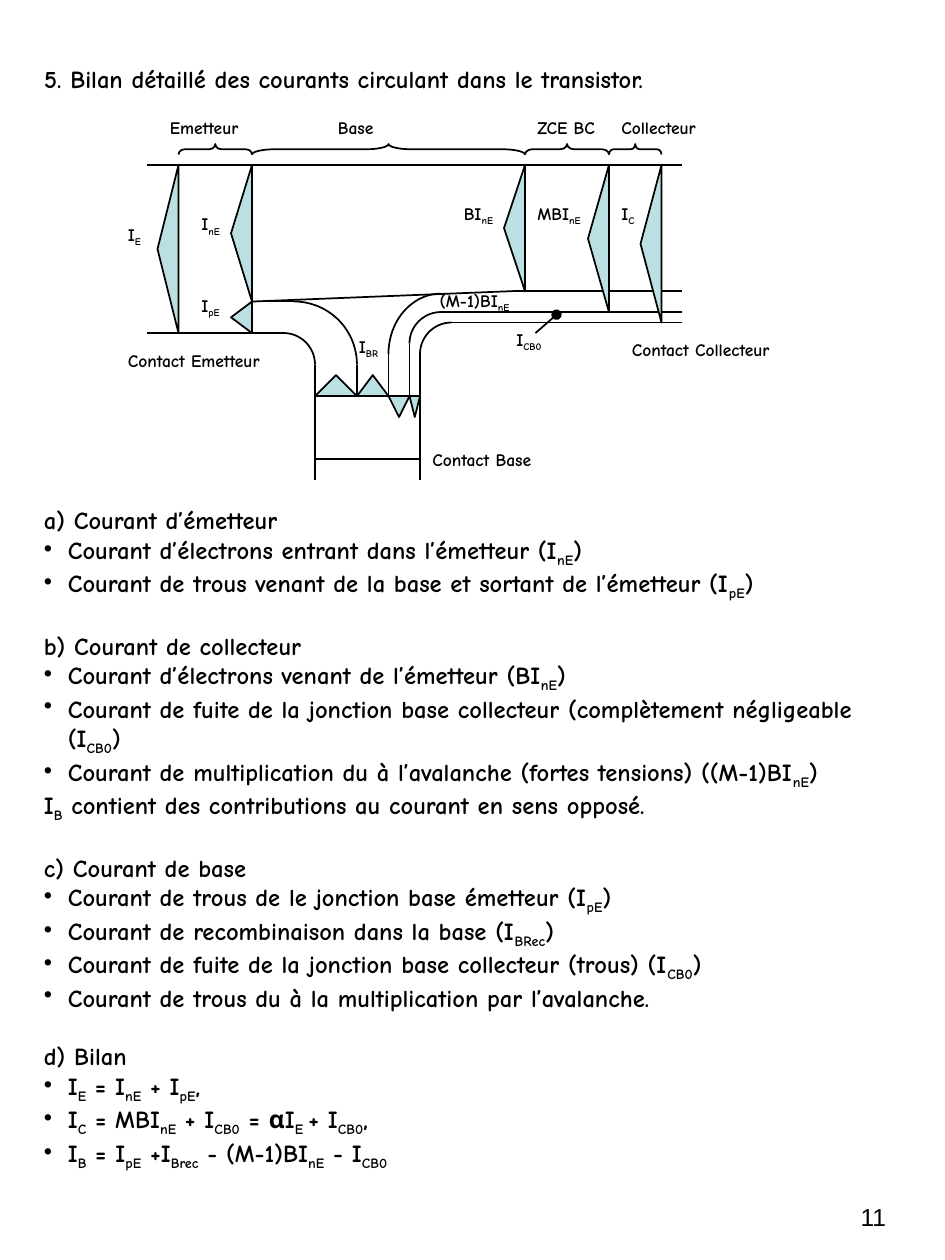
from dataclasses import dataclass
from math import cos, pi, sin

from lxml.etree import SubElement
from pptx import Presentation
from pptx.dml.color import RGBColor
from pptx.enum.shapes import MSO_CONNECTOR, MSO_SHAPE
from pptx.enum.text import MSO_ANCHOR, MSO_AUTO_SIZE, PP_ALIGN
from pptx.oxml.ns import qn
from pptx.util import Inches, Pt


@dataclass(frozen=True)
class Theme:
    ink: RGBColor = RGBColor(0, 0, 0)
    current: RGBColor = RGBColor(0xBB, 0xE0, 0xE3)
    font: str = "Comic Neue"
    number_font: str = "Arial"
    body: float = 14
    label: float = 10
    section_gap: float = 16.8
    line: float = 1


THEME = Theme()
WIDTH, HEIGHT = 7.5, 10
CELL = 1 / 12        # diagram grid, in inches
DIAGRAM_TOP = 1.31   # upper edge of the transistor
INDENT = 0.19

# Content: [..] marks a subscript
TITLE = "5. Bilan détaillé des courants circulant dans le transistor."
NUMBER = "11"
SECTIONS = [
    ("a) Courant d’émetteur", [
        "• Courant d’électrons entrant dans l’émetteur (I[nE])",
        "• Courant de trous venant de la base et sortant de l’émetteur (I[pE])"]),
    ("b) Courant de collecteur", [
        "• Courant d’électrons venant de l’émetteur (BI[nE])",
        "• Courant de fuite de la jonction base collecteur (complètement négligeable (I[CB0])",
        "• Courant de multiplication du à l’avalanche (fortes tensions) ((M-1)BI[nE])",
        "I[B] contient des contributions au courant en sens opposé."]),
    ("c) Courant de base", [
        "• Courant de trous de le jonction base émetteur (I[pE])",
        "• Courant de recombinaison dans la base (I[BRec])",
        "• Courant de fuite de la jonction base collecteur (trous) (I[CB0])",
        "• Courant de trous du à la multiplication par l’avalanche."]),
    ("d) Bilan", [
        "• I[E] = I[nE] + I[pE],",
        "• I[C] = MBI[nE] + I[CB0] = αI[E ]+ I[CB0],",
        "• I[B] = I[pE] +I[Brec] - (M-1)BI[nE] - I[CB0]"]),
]

# Diagram in grid cells: (text, column, row, width)
LABELS = [
    ("Emetteur", 15, -5.2, 16), ("Base", 31, -5.2, 16),
    ("ZCE BC", 50, -5.2, 9), ("Collecteur", 58, -5.2, 11),
    ("I[E]", 11, 5, 6), ("I[nE]", 18, 4, 6), ("I[pE]", 18, 11.8, 6),
    ("BI[nE]", 43, 3, 6), ("MBI[nE]", 50, 3, 9), ("I[C]", 58, 3, 6),
    ("I[CB0]", 48, 15, 6), ("(M-1)BI[nE]", 40.7, 11.3, 11), ("I[BR]", 33, 15.7, 6),
    ("Contact Emetteur", 11, 17, 16), ("Contact Base", 40, 26.5, 16),
    ("Contact Collecteur", 59, 16, 16),
]
# (column, row) to (column, row)
WALLS = [
    (14, 0, 65, 0), (14, 16, 27, 16), (43, 15, 65, 15),
    (30, 19, 30, 30), (40, 18, 40, 30), (30, 28, 40, 28),
    (24, 13, 28, 13), (34, 19, 34, 22), (39, 17, 39, 22), (37, 18, 37, 22),
    (49, 12, 65, 12), (42, 14, 65, 14), (24, 13, 49, 12),
]
# Quarter turns: centre column and row, radius across (sign gives the side), radius up
BENDS = [(27, 19, 3, 3), (43, 18, -3, 3), (28, 19, 6, 6), (42, 17, -3, 3), (42, 18, -5, 5.75)]
# Horizontal currents: column, first row, last row
SIDE_CURRENTS = [(17, 0, 16), (24, 0, 13), (24, 13, 16), (50, 0, 12), (58, 0, 14), (63, 0, 15)]
# Base currents: first column, last column, pointing up
BASE_CURRENTS = [(30, 34, True), (34, 37, True), (37, 39, False), (39, 40, False)]
BASE_ROW = 22
REGION_EDGES = [17, 24, 50, 58, 63]
POINTER = (51, 16, 53, 14.25)


def x_at(column):
    return Inches(column * CELL)


def y_at(row):
    return Inches(DIAGRAM_TOP + row * CELL)


def write(para, text, size, font=THEME.font, bold=True):
    for index, part in enumerate(text.replace("]", "[").split("[")):
        if part:
            span = para.add_run()
            span.text = part
            span.font.name, span.font.size, span.font.bold = font, Pt(size), bold
            span.font.color.rgb = THEME.ink
            if index % 2:
                span.font._element.set("baseline", "-25000")


def hang(para, bullet=False):
    props = para._p.get_or_add_pPr()
    props.set("marL", str(Inches(INDENT)))
    props.set("indent", str(-Inches(INDENT)))
    if bullet:
        SubElement(props, qn("a:buChar")).set("char", "•")


def add_box(shapes, left, top, width, height):
    box = shapes.add_textbox(left, top, width, height)
    box.text_frame.word_wrap = True
    return box.text_frame


def outline(shape, fill=None):
    shape.shadow.inherit = False
    shape.line.color.rgb = THEME.ink
    shape.line.width = Pt(THEME.line)
    if fill is None:
        shape.fill.background()
    else:
        shape.fill.solid()
        shape.fill.fore_color.rgb = fill


def add_turned(shapes, kind, column, row, length, depth, angle):
    """Place a preset by its centre, then turn it."""
    shape = shapes.add_shape(kind, x_at(column - length / 2), y_at(row - depth / 2),
                             Inches(length * CELL), Inches(depth * CELL))
    shape.rotation = angle
    outline(shape, THEME.current if kind == MSO_SHAPE.ISOSCELES_TRIANGLE else None)
    return shape


def add_line(shapes, x1, y1, x2, y2):
    line = shapes.add_connector(MSO_CONNECTOR.STRAIGHT, x_at(x1), y_at(y1), x_at(x2), y_at(y2))
    line.line.color.rgb = THEME.ink
    line.line.width = Pt(THEME.line)
    SubElement(line._element.spPr, qn("a:effectLst"))
    return line


def add_bend(shapes, column, row, across, up, steps=24):
    turns = [pi / 2 * step / steps for step in range(steps + 1)]
    points = [(x_at(column + across * sin(t)), y_at(row - up * cos(t))) for t in turns]
    builder = shapes.build_freeform(*points[0])
    builder.add_line_segments(points[1:], close=False)
    outline(builder.convert_to_shape())


def draw_diagram(shapes):
    for wall in WALLS:
        add_line(shapes, *wall)
    for bend in BENDS:
        add_bend(shapes, *bend)
    triangle = MSO_SHAPE.ISOSCELES_TRIANGLE
    for column, first, last in SIDE_CURRENTS:
        add_turned(shapes, triangle, column - 1, (first + last) / 2, last - first, 2, 270)
    for first, last, up in BASE_CURRENTS:
        add_turned(shapes, triangle, (first + last) / 2, BASE_ROW + (-1 if up else 1),
                   last - first, 2, 0 if up else 180)
    for first, last in zip(REGION_EDGES, REGION_EDGES[1:]):
        brace = add_turned(shapes, MSO_SHAPE.LEFT_BRACE, (first + last) / 2, -1.5,
                           1, last - first, 90)
        brace.adjustments[0] = (last - first) / 12
    for text, column, row, width in LABELS:
        frame = add_box(shapes, x_at(column), y_at(row), Inches(width * CELL), Inches(0.27))
        write(frame.paragraphs[0], text, THEME.label)
    pointer = add_line(shapes, *POINTER)
    SubElement(pointer.line._get_or_add_ln(), qn("a:tailEnd")).set("type", "oval")


def main():
    deck = Presentation()
    deck.slide_width, deck.slide_height = Inches(WIDTH), Inches(HEIGHT)
    page = deck.slides.add_slide(deck.slide_layouts[5])

    # Title
    title = page.shapes.title
    title.left, title.top, title.width, title.height = map(Inches, (0.25, 0.46, 6.97, 0.34))
    frame = title.text_frame
    frame.word_wrap, frame.auto_size = True, MSO_AUTO_SIZE.NONE
    frame.vertical_anchor = MSO_ANCHOR.TOP
    frame.paragraphs[0].alignment = PP_ALIGN.LEFT
    write(frame.paragraphs[0], TITLE, THEME.body)

    # Sections
    frame = add_box(page.shapes, *map(Inches, (0.25, 3.96, 6.97, 5.21)))
    for index, (heading, items) in enumerate(SECTIONS):
        para = frame.add_paragraph() if index else frame.paragraphs[0]
        para.space_before = Pt(THEME.section_gap if index else 0)
        hang(para)
        write(para, heading, THEME.body)
        for item in items:
            para = frame.add_paragraph()
            hang(para, item.startswith("• "))
            write(para, item.removeprefix("• "), THEME.body)

    # Diagram
    draw_diagram(page.shapes.add_group_shape().shapes)

    # Page number
    frame = add_box(page.shapes, *map(Inches, (5.38, 9.49, 1.75, 0.31)))
    frame.paragraphs[0].alignment = PP_ALIGN.RIGHT
    write(frame.paragraphs[0], NUMBER, THEME.body, THEME.number_font, False)

    deck.save("out.pptx")


if __name__ == "__main__":
    main()
